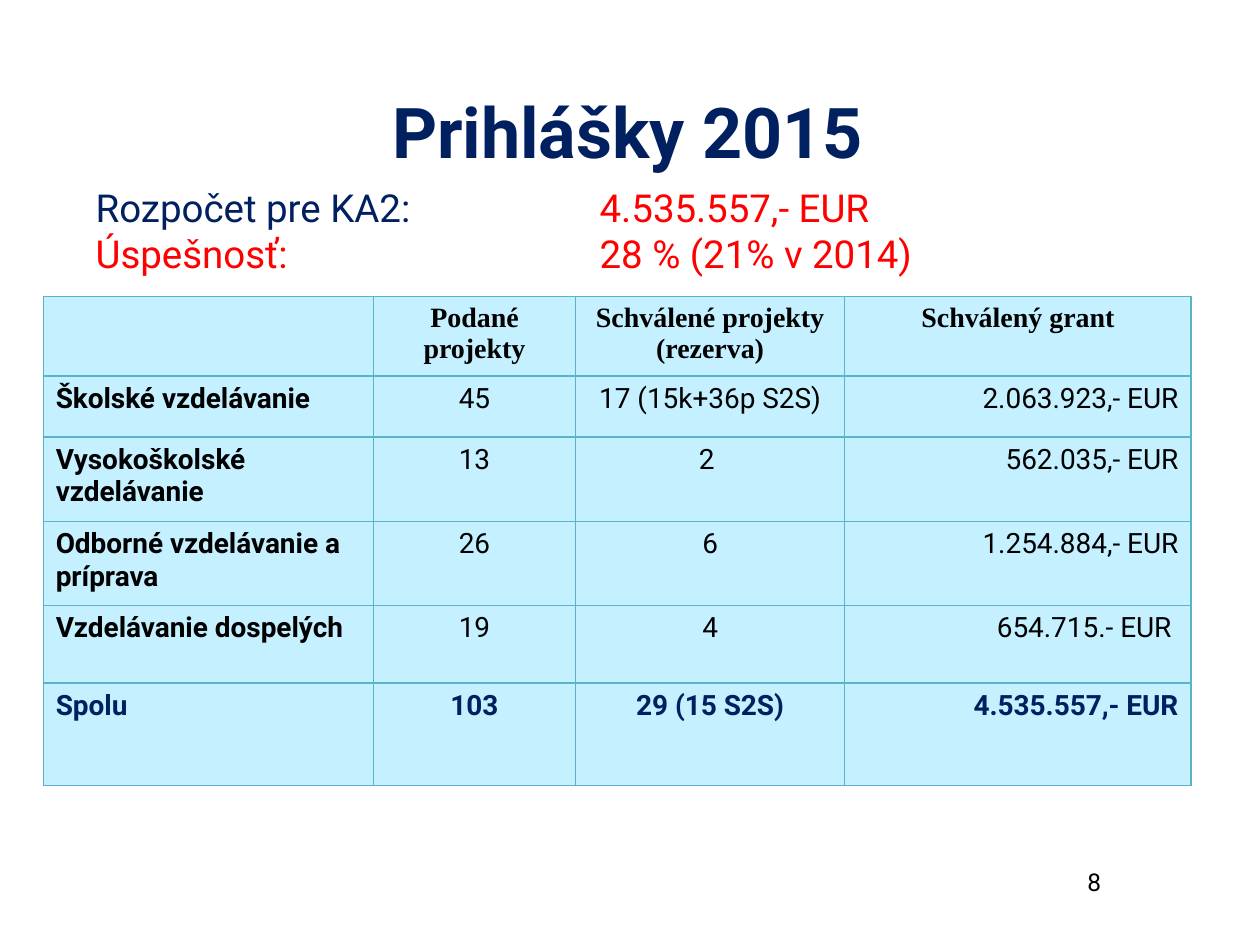
from lxml import etree
from pptx import Presentation
from pptx import util as u
from pptx.dml.color import RGBColor
from pptx.enum import text
from pptx.oxml import ns

NAVY = RGBColor(0x00, 0x20, 0x60)
RED = RGBColor(0xFF, 0x00, 0x00)
BLACK = RGBColor(0x00, 0x00, 0x00)
PALE = RGBColor(0xC5, 0xF0, 0xFF)
TEAL = RGBColor(0x5B, 0xB3, 0xCA)
LEFT, MID, RIGHT = text.PP_ALIGN.LEFT, text.PP_ALIGN.CENTER, text.PP_ALIGN.RIGHT


def write(para, words, size=16, font="Roboto", color=BLACK, bold=False, align=LEFT):
    para.alignment = align
    run = para.add_run()
    run.text = words
    run.font.size = u.Pt(size)
    run.font.name = font
    run.font.color.rgb = color
    run.font.bold = bold


def border(cell):
    props = cell._tc.get_or_add_tcPr()
    for side in ("a:lnL", "a:lnR", "a:lnT", "a:lnB"):
        line = etree.SubElement(props, ns.qn(side), w=str(u.Pt(0.75)))
        fill = etree.SubElement(line, ns.qn("a:solidFill"))
        etree.SubElement(fill, ns.qn("a:srgbClr"), val=str(TEAL))


prs = Presentation()
prs.slide_width, prs.slide_height = u.Cm(25.4), u.Cm(19.05)
slide = prs.slides.add_slide(prs.slide_layouts[5])

# Title
title = slide.shapes.title
title.left, title.top = u.Cm(1.85), u.Cm(1.6)
title.width, title.height = u.Cm(21.6), u.Cm(2.08)
title.text_frame.vertical_anchor = text.MSO_ANCHOR.MIDDLE
write(title.text_frame.paragraphs[0], "Prihlášky 2015",
      size=40, color=NAVY, bold=True, align=MID)

# Slide number
box = slide.shapes.add_textbox(u.Cm(18.21), u.Cm(17.35), u.Cm(4.24), u.Cm(1.27))
box.text_frame.word_wrap = True
write(box.text_frame.paragraphs[0], "8", size=14, align=RIGHT)

# Results table
rows = [
    ("", "Podané projekty", "Schválené projekty (rezerva)", "Schválený grant"),
    ("Školské vzdelávanie", "45", "17 (15k+36p S2S)", "2.063.923,- EUR"),
    ("Vysokoškolské vzdelávanie", "13", "2 ", "562.035,- EUR"),
    ("Odborné vzdelávanie a príprava", "26", "6", "1.254.884,- EUR"),
    ("Vzdelávanie dospelých", "19", "4", "654.715.- EUR "),
    ("Spolu", "103", "29 (15 S2S)", "4.535.557,- EUR"),
]
widths = (6.66, 4.07, 5.43, 6.98)
heights = (1.51, 1.23, 1.71, 1.68, 1.57, 2.07)
aligns = (LEFT, MID, MID, RIGHT)
last = len(rows) - 1

table = slide.shapes.add_table(len(rows), len(widths), u.Cm(0.87), u.Cm(5.97),
                               u.Cm(sum(widths)), u.Cm(sum(heights))).table
for col, width in zip(table.columns, widths):
    col.width = u.Cm(width)
for r, (row, height) in enumerate(zip(rows, heights)):
    table.rows[r].height = u.Cm(height)
    for c, words in enumerate(row):
        cell = table.cell(r, c)
        border(cell)
        cell.fill.solid()
        cell.fill.fore_color.rgb = PALE
        if words:
            write(cell.text_frame.paragraphs[0], words,
                  font="Times New Roman" if r == 0 else "Roboto",
                  color=NAVY if r == last else BLACK,
                  bold=r in (0, last) or c == 0,
                  align=MID if r == 0 else aligns[c])

# Budget and success rate, values lined up on one tab stop
box = slide.shapes.add_textbox(u.Cm(1.68), u.Cm(3.58), u.Cm(21.03), u.Cm(2.13))
frame = box.text_frame
frame.word_wrap = True
facts = [
    ("Rozpočet pre KA2:", NAVY, "4.535.557,- EUR"),
    ("Úspešnosť:", RED, "28 % (21% v 2014)"),
]
for i, (label, color, value) in enumerate(facts):
    para = frame.add_paragraph() if i else frame.paragraphs[0]
    tabs = etree.SubElement(para._p.get_or_add_pPr(), ns.qn("a:tabLst"))
    etree.SubElement(tabs, ns.qn("a:tab"), pos=str(u.Cm(10.16)), algn="l")
    write(para, label + "\t", size=22, color=color)
    write(para, value, size=22, color=RED)

prs.save("out.pptx")
